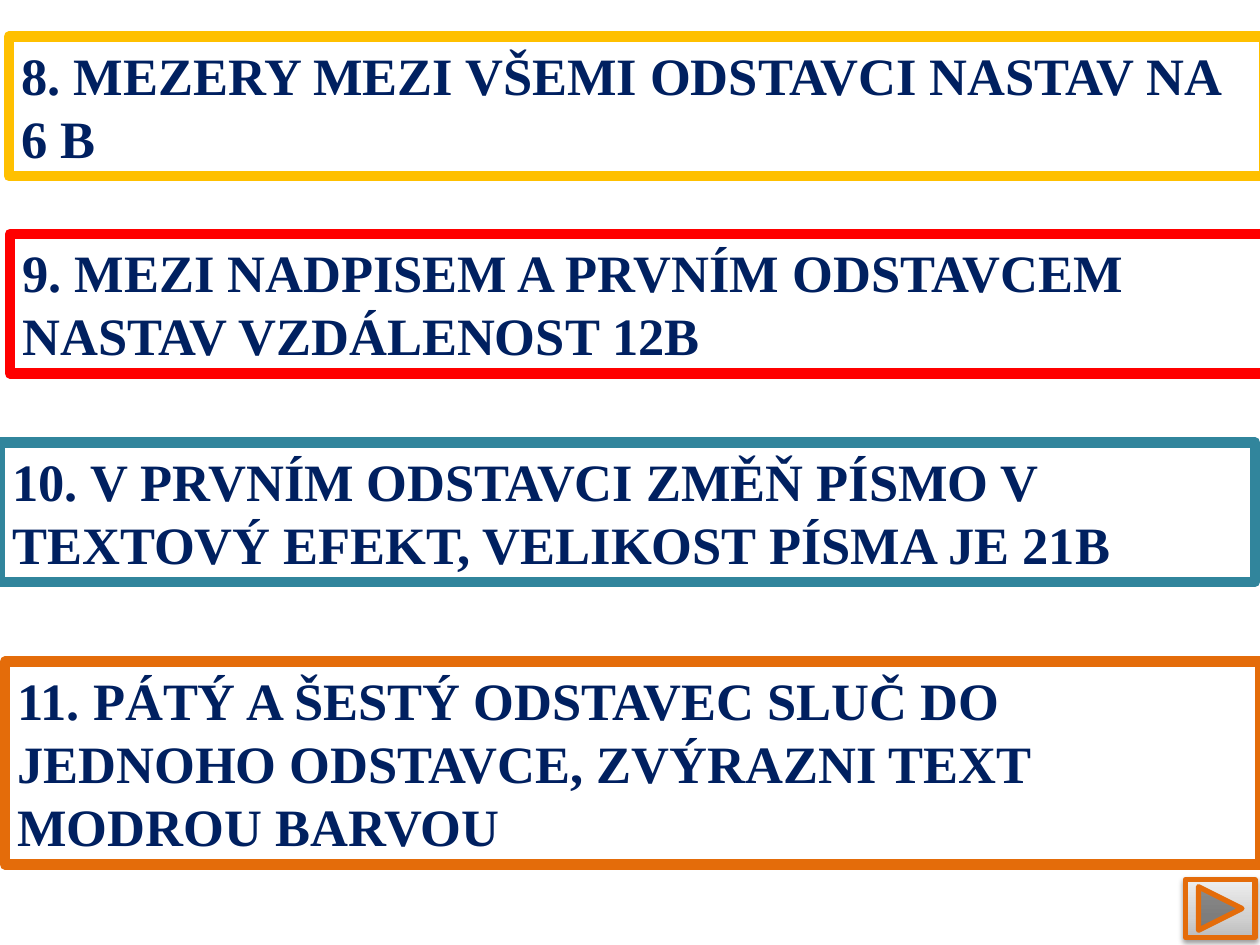
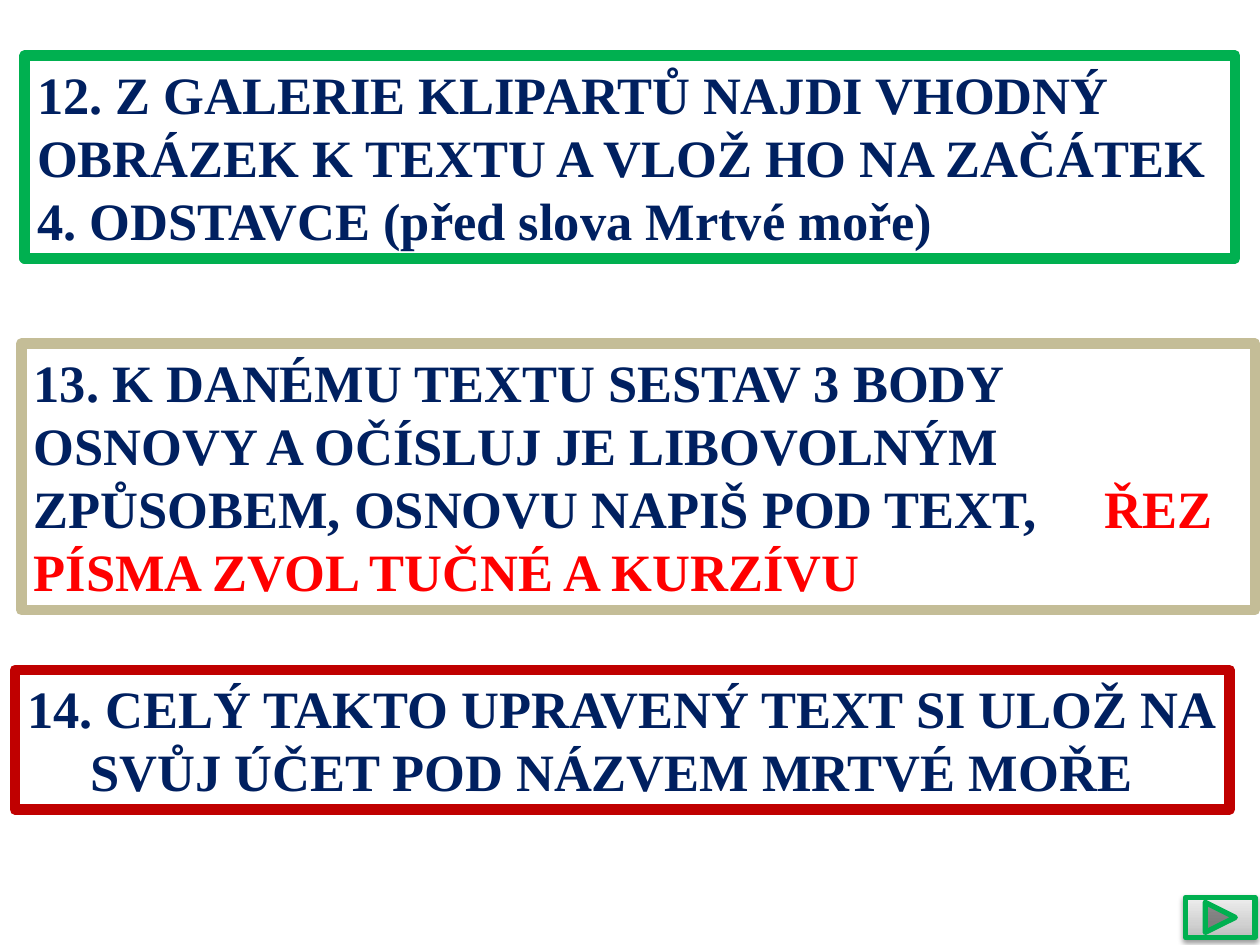
"""Builds two slides of framed word-processing tasks, each with a forward button."""
import pptx
import pptx.dml.color
import pptx.enum.shapes
import pptx.enum.text
import pptx.oxml
import pptx.util
from dataclasses import dataclass
from pptx.util import Cm, Pt


@dataclass(frozen=True)
class Theme:
    font: str = "Times New Roman"
    text_size: int = 30
    frame_width: int = 6
    button_line_width: int = 3
    navy: str = "002060"
    red: str = "FF0000"
    yellow: str = "FFC000"
    teal: str = "31859C"
    orange: str = "E46C0A"
    green: str = "00B050"
    sand: str = "C4BD97"
    dark_red: str = "C00000"
    button_stops: tuple = ((0, "BDBDBD"), (35, "D1D1D1"), (100, "EEEEEE"))


THEME = Theme()
LINE_HEIGHT, FRAME_PADDING = 1.28, 0.25
BUTTON_LEFT, BUTTON_WIDTH, BUTTON_BOTTOM = 23.9, 1.4, 18.9

SLIDES = [
    {
        "button": {"height": 1.17, "color": THEME.orange},
        "tasks": [
            {"left": 0.18, "top": 0.74, "width": 25.3, "lines": 2, "frame": THEME.yellow,
             "runs": [("8. MEZERY MEZI VŠEMI ODSTAVCI NASTAV NA \t6 B", THEME.navy)]},
            {"left": 0.2, "top": 4.72, "width": 25.3, "lines": 2, "frame": THEME.red,
             "runs": [("9. MEZI NADPISEM A PRVNÍM ODSTAVCEM \tNASTAV VZDÁLENOST 12B", THEME.navy)]},
            {"left": 0, "top": 8.92, "width": 25.3, "lines": 2, "frame": THEME.teal,
             "runs": [("10. V PRVNÍM ODSTAVCI ZMĚŇ PÍSMO V \tTEXTOVÝ EFEKT, VELIKOST PÍSMA JE 21B",
                       THEME.navy)]},
            {"left": 0.1, "top": 13.34, "width": 25.3, "lines": 3, "frame": THEME.orange,
             "runs": [("11. PÁTÝ A ŠESTÝ ODSTAVEC SLUČ DO \tJEDNOHO ODSTAVCE, ZVÝRAZNI TEXT "
                       "\tMODROU BARVOU", THEME.navy)]},
        ],
    },
    {
        "button": {"height": 0.81, "color": THEME.green},
        "tasks": [
            {"left": 0.5, "top": 1.12, "width": 24.4, "lines": 3, "frame": THEME.green,
             "runs": [("12. Z GALERIE KLIPARTŮ NAJDI VHODNÝ \tOBRÁZEK K TEXTU A VLOŽ HO NA "
                       "ZAČÁTEK 4. ODSTAVCE (před slova Mrtvé moře)", THEME.navy)]},
            {"left": 0.43, "top": 6.93, "width": 24.87, "lines": 4, "frame": THEME.sand,
             "runs": [("13. K DANÉMU TEXTU SESTAV 3 BODY \tOSNOVY A OČÍSLUJ JE LIBOVOLNÝM "
                       "\tZPŮSOBEM, OSNOVU NAPIŠ POD TEXT, \t", THEME.navy),
                      ("ŘEZ PÍSMA ZVOL TUČNÉ A KURZÍVU \t", THEME.red)]},
            {"left": 0.3, "top": 13.51, "width": 24.49, "lines": 2, "frame": THEME.dark_red,
             "runs": [("14. CELÝ TAKTO UPRAVENÝ TEXT SI ULOŽ NA \tSVŮJ ÚČET POD NÁZVEM MRTVÉ MOŘE",
                       THEME.navy)]},
        ],
    },
]


def set_line(shape, color, width):
    shape.line.color.rgb = pptx.dml.color.RGBColor.from_string(color)
    shape.line.width = Pt(width)


def add_text(paragraph, text, *, color, size=THEME.text_size, bold=True):
    run = paragraph.add_run()
    run.text = text
    run.font.name = THEME.font
    run.font.size = Pt(size)
    run.font.bold = bold
    run.font.color.rgb = pptx.dml.color.RGBColor.from_string(color)


def add_task(slide, left, top, width, lines, frame, runs):
    height = FRAME_PADDING + LINE_HEIGHT * lines
    shape = slide.shapes.add_textbox(Cm(left), Cm(top), Cm(width), Cm(height))
    set_line(shape, frame, THEME.frame_width)
    shape.text_frame.word_wrap = True
    shape.text_frame.auto_size = pptx.enum.text.MSO_AUTO_SIZE.SHAPE_TO_FIT_TEXT
    for text, color in runs:
        add_text(shape.text_frame.paragraphs[0], text, color=color)


def add_forward_button(slide, height, color):
    shape = slide.shapes.add_shape(
        pptx.enum.shapes.MSO_SHAPE.ACTION_BUTTON_FORWARD_OR_NEXT,
        Cm(BUTTON_LEFT), Cm(BUTTON_BOTTOM - height), Cm(BUTTON_WIDTH), Cm(height))
    namespace = 'xmlns:a="http://schemas.openxmlformats.org/drawingml/2006/main"'
    stops = "".join(f'<a:gs pos="{position * 1000}"><a:srgbClr val="{shade}"/></a:gs>'
                    for position, shade in THEME.button_stops)
    gradient = pptx.oxml.parse_xml(
        f'<a:gradFill {namespace} rotWithShape="1"><a:gsLst>{stops}</a:gsLst>'
        f'<a:lin ang="{270 * 60000}" scaled="1"/></a:gradFill>')
    shadow = pptx.oxml.parse_xml(
        f'<a:effectLst {namespace}><a:outerShdw blurRad="{Pt(3.1)}" dist="{Pt(1.6)}" '
        f'dir="{90 * 60000}" rotWithShape="0"><a:srgbClr val="000000">'
        '<a:alpha val="38000"/></a:srgbClr></a:outerShdw></a:effectLst>')
    set_line(shape, color, THEME.button_line_width)
    properties = shape.element.spPr
    properties.prstGeom.addnext(gradient)
    properties.append(shadow)


def main():
    presentation = pptx.Presentation()
    presentation.slide_width, presentation.slide_height = Cm(25.4), Cm(19.05)
    blank_layout = presentation.slide_layouts.get_by_name("Blank")
    for content in SLIDES:
        slide = presentation.slides.add_slide(blank_layout)
        for task in content["tasks"]:
            add_task(slide, **task)
        add_forward_button(slide, **content["button"])
    presentation.save("out.pptx")


if __name__ == "__main__":
    main()
